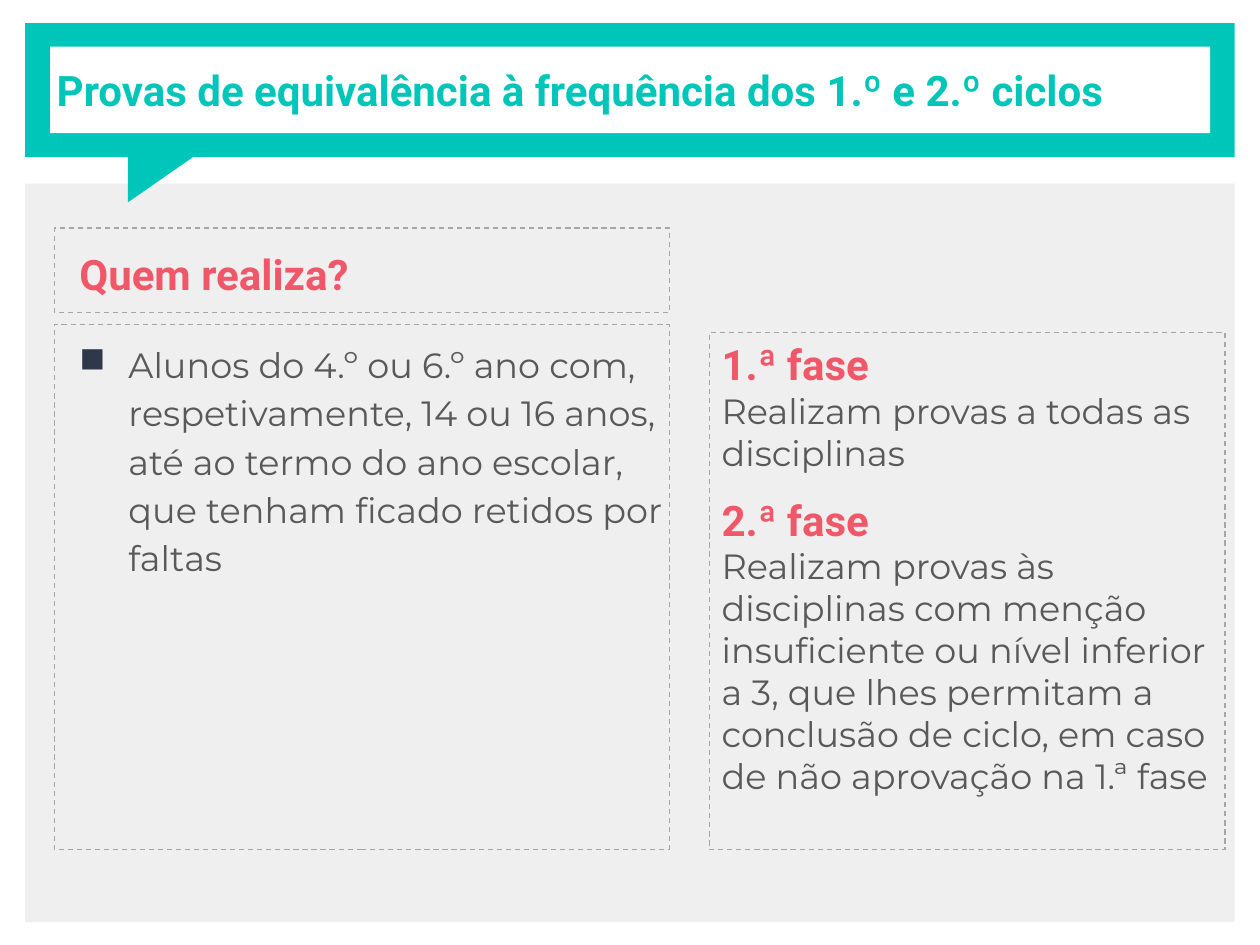
from dataclasses import dataclass

from lxml.etree import SubElement
from pptx import Presentation
from pptx.dml.color import RGBColor
from pptx.enum.dml import MSO_LINE
from pptx.enum.shapes import MSO_SHAPE as Preset
from pptx.enum.text import MSO_ANCHOR as Anchor, MSO_AUTO_SIZE as AutoSize, PP_ALIGN as Align
from pptx.oxml.ns import qn
from pptx.util import Pt

TEAL = RGBColor(0x00, 0xC5, 0xB9)
CORAL = RGBColor(0xF0, 0x57, 0x68)
TEXT_GREY = RGBColor(0x59, 0x59, 0x59)
BORDER_GREY = RGBColor(0xA6, 0xA6, 0xA6)
PANEL_GREY = RGBColor(0xEF, 0xEF, 0xEF)
BULLET_NAVY = RGBColor(0x2F, 0x38, 0x48)
WHITE = RGBColor(0xFF, 0xFF, 0xFF)


@dataclass(frozen=True)
class Box:
    left: float
    top: float
    width: float
    height: float

    def lengths(self) -> tuple:
        return Pt(self.left), Pt(self.top), Pt(self.width), Pt(self.height)


@dataclass(frozen=True)
class Style:
    font: str
    size: float
    color: RGBColor
    bold: bool = False


@dataclass(frozen=True)
class Line:
    text: str
    style: Style
    spacing: float = 1.0
    before: float = 0
    after: float = 0
    margin: float = 0
    indent: float = 0
    bullet: str = ""


TITLE = Style("Roboto", 24, TEAL, True)
HEADING = Style("Roboto", 24, CORAL, True)
BODY = Style("Montserrat", 20, TEXT_GREY)


def add_block(shapes, preset: Preset, box: Box, fill: RGBColor, rotation: float = 0) -> None:
    block = shapes.add_shape(preset, *box.lengths())
    block.rotation = rotation
    block.shadow.inherit = False
    block.fill.solid()
    block.fill.fore_color.rgb = fill
    block.line.fill.background()


def write_lines(frame, lines: list[Line], anchor: Anchor, inset_y: float, inset_right: float) -> None:
    frame.word_wrap = True
    frame.auto_size = AutoSize.NONE
    frame.vertical_anchor = anchor
    frame.margin_left, frame.margin_right = Pt(7.2), Pt(inset_right)
    frame.margin_top = frame.margin_bottom = Pt(inset_y)
    frame.text = "\n".join(line.text for line in lines)
    for paragraph, line in zip(frame.paragraphs, lines):
        paragraph.alignment = Align.LEFT
        paragraph.line_spacing = line.spacing
        paragraph.space_before, paragraph.space_after = Pt(line.before), Pt(line.after)
        properties = paragraph._p.get_or_add_pPr()
        properties.set("marL", str(Pt(line.margin)))
        properties.set("indent", str(Pt(line.indent)))
        if line.bullet:
            bullet_color = SubElement(properties, qn("a:buClr"))
            SubElement(bullet_color, qn("a:srgbClr"), val=str(BULLET_NAVY))
            SubElement(properties, qn("a:buChar"), char=line.bullet)
        for run in paragraph.runs:
            run.font.name = line.style.font
            run.font.size = Pt(line.style.size)
            run.font.bold = line.style.bold
            run.font.color.rgb = line.style.color


def add_dashed_box(shapes, box: Box, lines: list[Line], inset_y: float = 7.2) -> None:
    dashed = shapes.add_shape(Preset.RECTANGLE, *box.lengths())
    dashed.shadow.inherit = False
    dashed.fill.background()
    dashed.line.color.rgb = BORDER_GREY
    dashed.line.width = Pt(0.75)
    dashed.line.dash_style = MSO_LINE.DASH
    write_lines(dashed.text_frame, lines, Anchor.TOP, inset_y, inset_right=0)


def main() -> None:
    deck = Presentation()
    deck.slide_width, deck.slide_height = Pt(720), Pt(540)
    slide = deck.slides.add_slide(deck.slide_layouts[5])
    shapes = slide.shapes

    # Grey panel and the speech-bubble banner
    add_block(shapes, Preset.RECTANGLE, Box(14.4, 105, 691.2, 422), PANEL_GREY)
    add_block(shapes, Preset.RECTANGLE, Box(14.4, 13.2, 691.2, 76.5), TEAL)
    add_block(shapes, Preset.RIGHT_TRIANGLE, Box(80.7, 73.5, 34.5, 49.7), TEAL, rotation=90)
    add_block(shapes, Preset.RECTANGLE, Box(28.6, 26.7, 663, 49.5), WHITE)

    # Title, brought in front of the banner
    title = shapes.title
    title.left, title.top, title.width, title.height = Box(25.2, 13.2, 666, 76.5).lengths()
    title_line = Line("Provas de equivalência à frequência dos 1.º e 2.º ciclos", TITLE)
    write_lines(title.text_frame, [title_line], Anchor.MIDDLE, 7.2, inset_right=7.2)
    shapes._spTree.append(title._element)

    # Left column: who takes the exams
    add_dashed_box(shapes, Box(31, 130.4, 351.4, 48.2), [
        Line("Quem realiza?", HEADING, spacing=1.15, margin=7.2),
    ])
    add_dashed_box(shapes, Box(31, 185.4, 351.4, 300), [
        Line("Alunos do 4.º ou 6.º ano com, respetivamente, 14 ou 16 anos, até ao termo "
             "do ano escolar, que tenham ficado retidos por faltas",
             BODY, spacing=1.15, before=6, after=12, margin=35.3, indent=-28, bullet="■"),
    ])

    # Right column: the two phases
    add_dashed_box(shapes, Box(405.3, 190, 294.8, 295.4), [
        Line("1.ª fase", HEADING),
        Line("Realizam provas a todas as disciplinas", BODY, after=12),
        Line("2.ª fase", HEADING),
        Line("Realizam provas às disciplinas com menção insuficiente ou nível inferior a 3, "
             "que lhes permitam a conclusão de ciclo, em caso de não aprovação na 1.ª fase", BODY),
    ], inset_y=3.6)

    deck.save("out.pptx")


if __name__ == "__main__":
    main()
